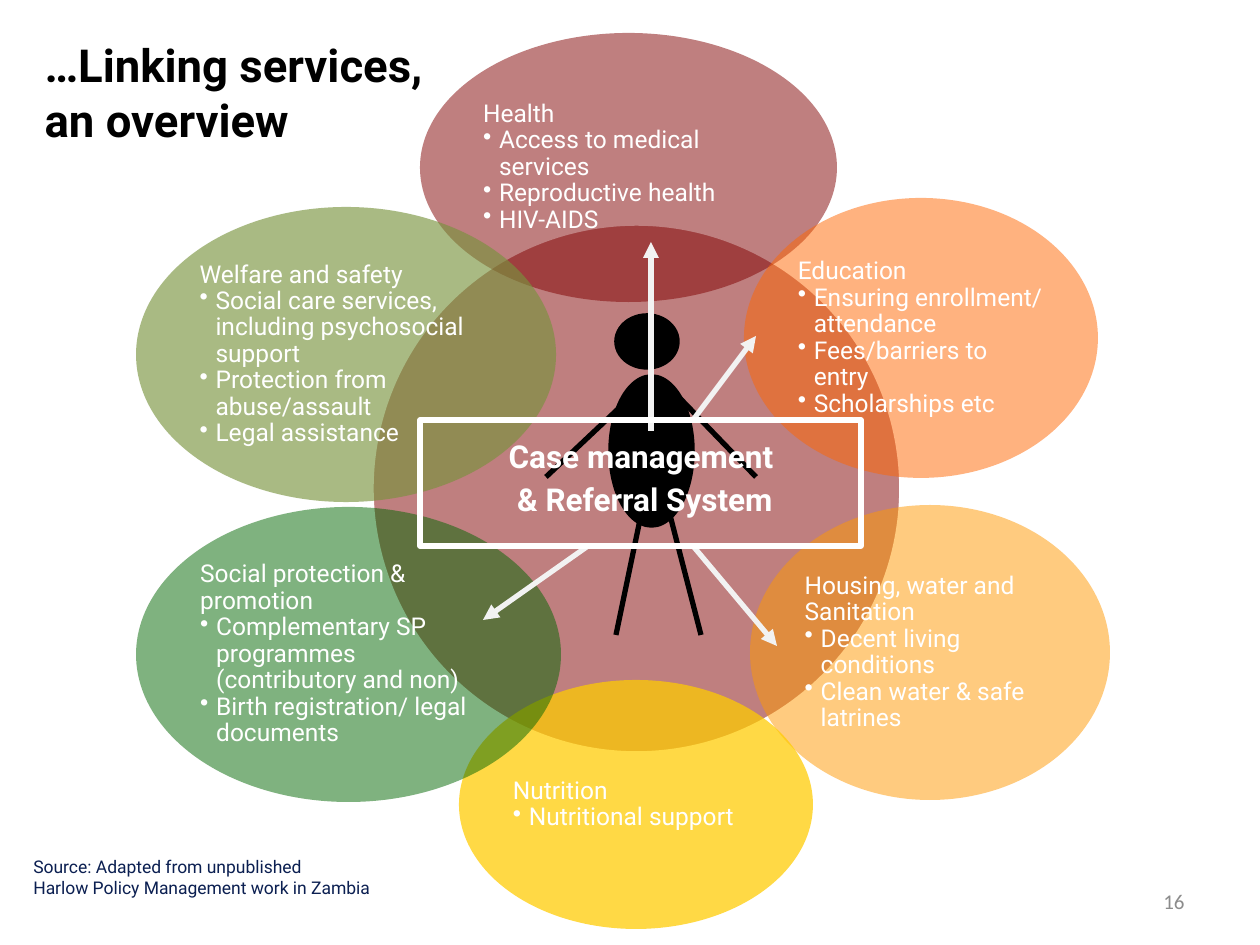
from math import sqrt

from lxml import etree
from pptx import Presentation
from pptx.dml.color import RGBColor
from pptx.enum.shapes import MSO_CONNECTOR, MSO_SHAPE
from pptx.enum.text import MSO_ANCHOR, MSO_AUTO_SIZE, PP_ALIGN
from pptx.oxml.ns import qn
from pptx.util import Pt

OVAL, RECTANGLE = MSO_SHAPE.OVAL, MSO_SHAPE.RECTANGLE
STRAIGHT = MSO_CONNECTOR.STRAIGHT
TOP, MIDDLE = MSO_ANCHOR.TOP, MSO_ANCHOR.MIDDLE
LEFT, CENTER, RIGHT = PP_ALIGN.LEFT, PP_ALIGN.CENTER, PP_ALIGN.RIGHT
NO_AUTOFIT = MSO_AUTO_SIZE.NONE

EMU_PER_PX = 914400 / 126
SLIDE_SIZE = (1260, 945)
COLORS = {
    "maroon": "800000", "orange": "FF6600", "amber": "FF9900",
    "yellow": "FFCC00", "green": "006600", "olive": "77933C",
    "white": "FFFFFF", "black": "000000", "arrow": "F2F2F2",
    "navy": "0B1F51", "gray": "8C8C8C",
}

# Content: all places are (left, top, width, height) in px
TITLE = ["…Linking services, \van overview"]
SOURCE = ["Source: Adapted from unpublished",
          "Harlow Policy Management work in Zambia"]
PAGE_NUMBER = ["16"]
SYSTEM = ["Case management ", "& Referral System"]
HUB = (372, 224, 529, 529)
SYSTEM_FRAME = (420, 420, 441, 126)

# (heading, bullets, ellipse, colour, opacity in percent)
SERVICES = [
    ("Health",
     ["Access to medical services", "Reproductive health", "HIV-AIDS"],
     (420, 33, 417, 269), "maroon", 50),
    ("Education",
     ["Ensuring enrollment/ attendance", "Fees/barriers to entry", "Scholarships etc"],
     (744, 198, 354, 280), "orange", 50),
    ("Housing, water and Sanitation",
     ["Decent living conditions", "Clean water & safe latrines"],
     (750, 505, 360, 295), "amber", 50),
    ("Nutrition",
     ["Nutritional support"],
     (459, 680, 354, 249), "yellow", 73),
    ("Social protection & promotion",
     ["Complementary SP programmes (contributory and non)",
      "Birth registration/ legal documents"],
     (136, 507, 425, 295), "green", 50),
    ("Welfare and safety",
     ["Social care services, including psychosocial support",
      "Protection from abuse/assault", "Legal assistance"],
     (136, 207, 420, 295), "olive", 63),
]

# Person at the centre, and arrows out to the services
HEAD, TORSO = (616, 315, 62, 53), (610, 376, 83, 150)
LIMBS = [
    ((634, 394), (546, 477)), ((641, 515), (616, 635)),
    ((756, 477), (670, 388)), ((670, 515), (701, 635)),
]
ARROWS = [
    ((651, 431), (651, 242)), ((588, 546), (483, 620)),
    ((693, 420), (756, 336)), ((693, 546), (777, 646)),
]


def px(*lengths):
    return [round(length * EMU_PER_PX) for length in lengths]


def rgb(name):
    return RGBColor.from_string(COLORS[name])


def add_outline(slide, preset, place, fill=None, opacity=100, line=None, width=2):
    shape = slide.shapes.add_shape(preset, *px(*place))
    shape.shadow.inherit = False
    if fill:
        shape.fill.solid()
        shape.fill.fore_color.rgb = rgb(fill)
        color = shape.fill._xPr.find(".//" + qn("a:srgbClr"))
        etree.SubElement(color, qn("a:alpha"), val=str(opacity * 1000))
    else:
        shape.fill.background()
    if line:
        shape.line.color.rgb = rgb(line)
        shape.line.width = Pt(width)
    else:
        shape.line.fill.background()


def add_line(slide, start, end, color, arrow=False):
    line = slide.shapes.add_connector(STRAIGHT, *px(*start, *end))
    line.line.color.rgb = rgb(color)
    line.line.width = Pt(3)
    if arrow:
        etree.SubElement(line.line._get_or_add_ln(), qn("a:tailEnd"), type="triangle")
    etree.SubElement(line._element.spPr, qn("a:effectLst"))


def add_bullet(paragraph):
    paragraph.level = 1
    hang = px(16)[0]
    properties = paragraph._p.get_or_add_pPr()
    properties.set("marL", str(hang))
    properties.set("indent", str(-hang))
    etree.SubElement(properties, qn("a:buChar"), char="•")


def write(slide, place, lines, holder=None, size=14, font="Roboto", color="white",
          bold=False, align=LEFT, anchor=TOP, inset=None, wrap=True,
          spacing=None, after=None, bullets_from=None):
    """Put one paragraph per line in a placeholder or a new text box."""
    left, top, width, height = px(*place)
    box = holder or slide.shapes.add_textbox(left, top, width, height)
    box.left, box.top, box.width, box.height = left, top, width, height
    frame = box.text_frame
    frame.word_wrap = wrap
    frame.auto_size = NO_AUTOFIT
    frame.vertical_anchor = anchor
    if inset is not None:
        margin = px(inset)[0]
        frame.margin_left = frame.margin_right = margin
        frame.margin_top = frame.margin_bottom = margin
    for index, line in enumerate(lines):
        paragraph = frame.add_paragraph() if index else frame.paragraphs[0]
        paragraph.text = line
        paragraph.alignment = align
        if spacing:
            paragraph.line_spacing = spacing
        if after:
            paragraph.space_after = Pt(after)
        if bullets_from is not None and index >= bullets_from:
            add_bullet(paragraph)
        for run in paragraph.runs:
            run.font.name, run.font.size, run.font.bold = font, Pt(size), bold
            run.font.color.rgb = rgb(color)


def inscribed(ellipse):
    """Largest centred rectangle of the same proportions inside an ellipse."""
    left, top, width, height = ellipse
    share = 1 / sqrt(2)
    margin = (1 - share) / 2
    return left + width * margin, top + height * margin, width * share, height * share


def main():
    deck = Presentation()
    deck.slide_width, deck.slide_height = px(*SLIDE_SIZE)
    slide = deck.slides.add_slide(deck.slide_layouts[5])

    # Page number
    write(slide, (903, 876, 294, 50), PAGE_NUMBER, size=12, font="Calibri",
          color="gray", align=RIGHT, anchor=MIDDLE)

    # Hub and services
    add_outline(slide, OVAL, HUB, fill="maroon", opacity=50, line="white")
    for heading, bullets, ellipse, color, opacity in SERVICES:
        add_outline(slide, OVAL, ellipse, fill=color, opacity=opacity)
        write(slide, inscribed(ellipse), [heading, *bullets], anchor=MIDDLE,
              inset=2, spacing=0.9, bullets_from=1)

    # Person
    for part in (HEAD, TORSO):
        add_outline(slide, OVAL, part, fill="black", line="black")
    for start, end in LIMBS:
        add_line(slide, start, end, "black")

    # Arrows
    for start, end in ARROWS:
        add_line(slide, start, end, "arrow", arrow=True)

    # Source, referral system and title
    write(slide, (21, 850, 378, 77), SOURCE, size=10, color="navy")
    add_outline(slide, RECTANGLE, SYSTEM_FRAME, line="white", width=3)
    write(slide, (494, 444, 302, 84), SYSTEM, size=18, bold=True, align=CENTER,
          wrap=False, spacing=0.6, after=12)
    write(slide, (32, 53, 484, 78), TITLE, holder=slide.shapes.title, size=26,
          color="black", bold=True, anchor=MIDDLE)

    deck.save("out.pptx")


if __name__ == "__main__":
    main()
